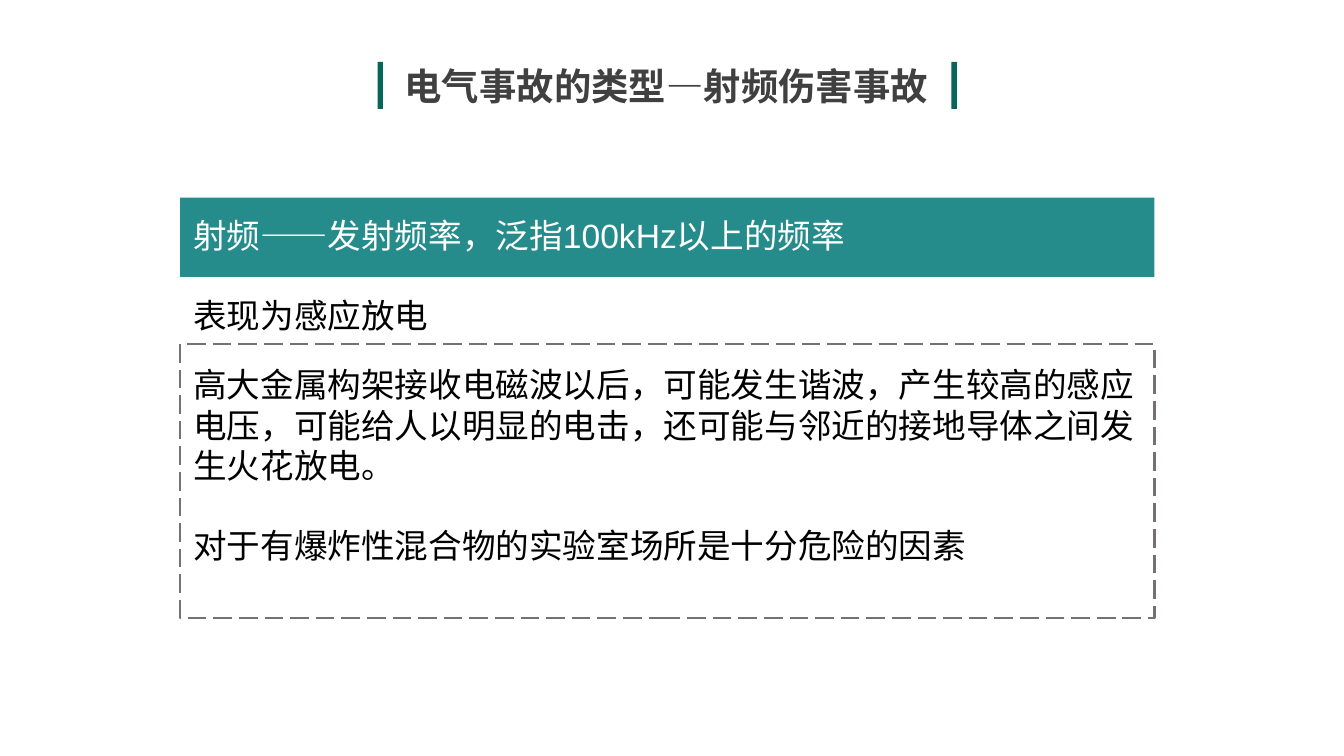
from dataclasses import dataclass

from lxml import etree
from pptx import Presentation
from pptx.dml.color import RGBColor
from pptx.enum import dml, shapes, text
from pptx.oxml import ns
from pptx.util import Inches, Pt


@dataclass(frozen=True)
class Theme:
    teal: RGBColor = RGBColor.from_string("258C8B")
    dark_teal: RGBColor = RGBColor.from_string("07655B")
    title: RGBColor = RGBColor.from_string("404040")
    body: RGBColor = RGBColor.from_string("000000")
    light: RGBColor = RGBColor.from_string("FFFFFF")
    frame: RGBColor = RGBColor.from_string("767171")
    latin: str = "Arial"
    chinese: str = "Noto Sans CJK SC"
    title_size: Pt = Pt(20)
    body_size: Pt = Pt(18)
    gap: Pt = Pt(21.5)


THEME = Theme()
LEFT, WIDTH = 1.34, 7.25


def style_paragraph(para, size, color, latin, bold=False):
    font = para.font
    font.size, font.bold, font.name = size, bold, latin
    font.color.rgb = color
    # Chinese characters take their own typeface
    east_asian = etree.Element(ns.qn("a:ea"), typeface=THEME.chinese)
    font._element.find(ns.qn("a:latin")).addnext(east_asian)


def add_rectangle(page, left, top, width, height, fill=None):
    box = page.shapes.add_shape(
        shapes.MSO_SHAPE.RECTANGLE,
        Inches(left), Inches(top), Inches(width), Inches(height))
    box.shadow.inherit = False
    if fill is None:
        box.fill.background()
    else:
        box.fill.solid()
        box.fill.fore_color.rgb = fill
    box.line.fill.background()
    return box


def add_dashed_frame(page, left, top, width, height):
    frame = add_rectangle(page, left, top, width, height)
    frame.line.color.rgb = THEME.frame
    frame.line.width = Pt(1.25)
    frame.line.dash_style = dml.MSO_LINE.LONG_DASH


def add_text(page, left, top, width, height, lines, latin):
    """Add a text box from (wording, colour) pairs, spaced apart."""
    box = page.shapes.add_textbox(
        Inches(left), Inches(top), Inches(width), Inches(height))
    frame = box.text_frame
    frame.word_wrap = True
    for index, (wording, color) in enumerate(lines):
        para = frame.paragraphs[0] if index == 0 else frame.add_paragraph()
        para.text = wording
        if index:
            para.space_before = THEME.gap
        style_paragraph(para, THEME.body_size, color, latin)


def set_title(page, wording):
    title = page.shapes.title
    title.left, title.top = Inches(2.91), Inches(0.42)
    title.width, title.height = Inches(4.11), Inches(0.44)
    frame = title.text_frame
    frame.text = wording
    frame.word_wrap = False
    frame.auto_size = text.MSO_AUTO_SIZE.SHAPE_TO_FIT_TEXT
    frame.vertical_anchor = text.MSO_ANCHOR.TOP
    para = frame.paragraphs[0]
    para.alignment = text.PP_ALIGN.LEFT
    style_paragraph(para, THEME.title_size, THEME.title, THEME.chinese, True)


def main():
    # Widescreen page, 16 by 9
    deck = Presentation()
    deck.slide_width = Inches(10)
    deck.slide_height = Inches(10 * 9 / 16)
    page = deck.slides.add_slide(deck.slide_layouts[5])

    # Title between two upright bars
    set_title(page, "电气事故的类型—射频伤害事故")
    for bar_left in (2.81, 7.08):
        add_rectangle(page, bar_left, 0.46, 0.04, 0.35, THEME.dark_teal)

    # Definition on its band, with the lead-in below
    add_rectangle(page, LEFT, 1.47, WIDTH, 0.59, THEME.teal)
    add_text(page, LEFT, 1.55, 6.88, 1.01, [
        ("射频——发射频率，泛指100kHz以上的频率", THEME.light),
        ("表现为感应放电", THEME.body),
    ], THEME.latin)

    # Explanation in a dashed frame
    add_text(page, LEFT, 2.66, 7.28, 1.61, [
        ("高大金属构架接收电磁波以后，可能发生谐波，产生较高的感应电压，"
         "可能给人以明显的电击，还可能与邻近的接地导体之间发生火花放电。",
         THEME.body),
        ("对于有爆炸性混合物的实验室场所是十分危险的因素", THEME.body),
    ], THEME.chinese)
    add_dashed_frame(page, LEFT, 2.56, WIDTH, 2.04)

    deck.save("out.pptx")


if __name__ == "__main__":
    main()
